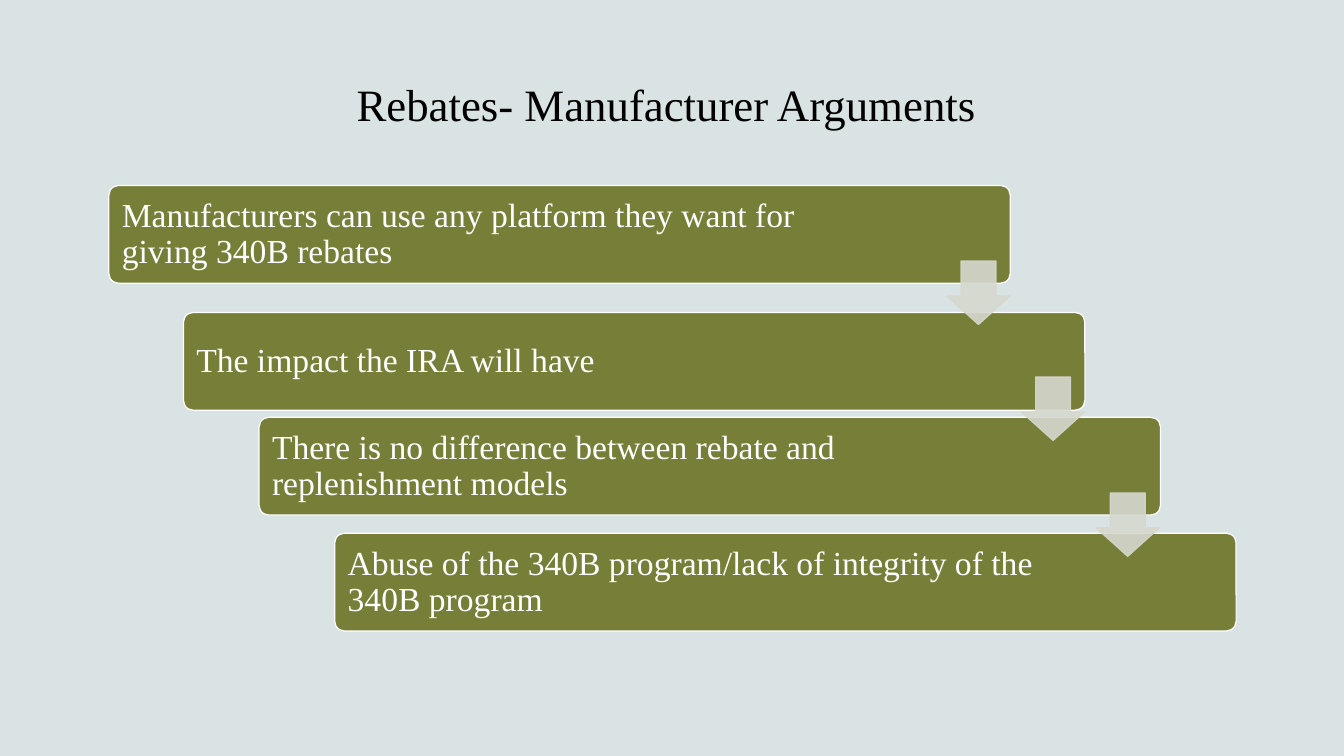
from lxml import etree
from pptx import Presentation, util as u
from pptx.dml.color import RGBColor
from pptx.enum import shapes, text
from pptx.oxml.ns import qn

PX = 9144
ARGUMENTS = [
    (184, 780, "Manufacturers can use any platform they want for giving 340B rebates"),
    (310, 750, "The impact the IRA will have"),
    (414, 750, "There is no difference between rebate and replenishment models"),
    (529, 750, "Abuse of the 340B program/lack of integrity of the 340B program"),
]


def px(*lengths):
    return [u.Emu(n * PX) for n in lengths]


def rgb(value):
    return RGBColor.from_string(value)


class Deck:
    font = "Times New Roman"
    back, bar_fill, arrow_fill = "DAE3E3", "767E37", "D6D8CE"
    white, black = "FFFFFF", "000000"

    def __init__(self):
        self.prs = Presentation()
        self.prs.slide_width = u.Inches(13.33)
        self.prs.slide_height = u.Inches(7.5)
        self.s = self.prs.slides.add_slide(self.prs.slide_layouts[6])
        fill = self.s.background.fill
        fill.solid()
        fill.fore_color.rgb = rgb(self.back)

    def shape(self, kind, box, fill, line, adjust, opacity=100):
        sp = self.s.shapes.add_shape(kind, *px(*box))
        sp.shadow.inherit = False
        for i, value in enumerate(adjust):
            sp.adjustments[i] = value
        sp.fill.solid()
        sp.fill.fore_color.rgb = rgb(fill)
        sp.line.color.rgb = rgb(line)
        sp.line.width = u.Pt(0.85)
        if opacity < 100:
            for clr in sp._element.spPr.iter(qn("a:srgbClr")):
                etree.SubElement(clr, qn("a:alpha"), val=str(opacity * 1000))

    def label(self, box, words, size, color, align, anchor, inset=(10, 10)):
        tf = self.s.shapes.add_textbox(*px(*box)).text_frame
        tf.word_wrap = True
        tf.vertical_anchor = anchor
        tf.margin_left, tf.margin_top = px(*inset)
        tf.margin_right, tf.margin_bottom = px(*inset)
        p = tf.paragraphs[0]
        p.alignment = align
        p.line_spacing = 0.9
        r = p.add_run()
        r.text = words
        r.font.name = self.font
        r.font.size = u.Pt(size)
        r.font.color.rgb = rgb(color)

    def title(self, words):
        self.label((108, 13, 1117, 122), words, 32, self.black,
                   text.PP_ALIGN.CENTER, text.MSO_ANCHOR.BOTTOM, (10, 5))

    def bar(self, left, top, text_width, words):
        self.shape(shapes.MSO_SHAPE.ROUNDED_RECTANGLE, (left, top, 894, 97),
                   self.bar_fill, self.white, [0.1])
        self.label((left + 3, top + 3, text_width, 92), words, 24, self.white,
                   text.PP_ALIGN.LEFT, text.MSO_ANCHOR.MIDDLE)

    def arrow(self, left, top):
        self.shape(shapes.MSO_SHAPE.DOWN_ARROW, (left, top, 63, 63),
                   self.arrow_fill, self.arrow_fill, [0.55, 0.45], 90)


def main():
    deck = Deck()
    deck.title("Rebates- Manufacturer Arguments ")
    for i, (top, text_width, words) in enumerate(ARGUMENTS):
        deck.bar(108 + 224 * i // 3, top, text_width, words)
    for i in range(len(ARGUMENTS) - 1):
        deck.arrow(939 + 74 * i, 259 + 115 * i)
    deck.prs.save("out.pptx")


if __name__ == "__main__":
    main()
